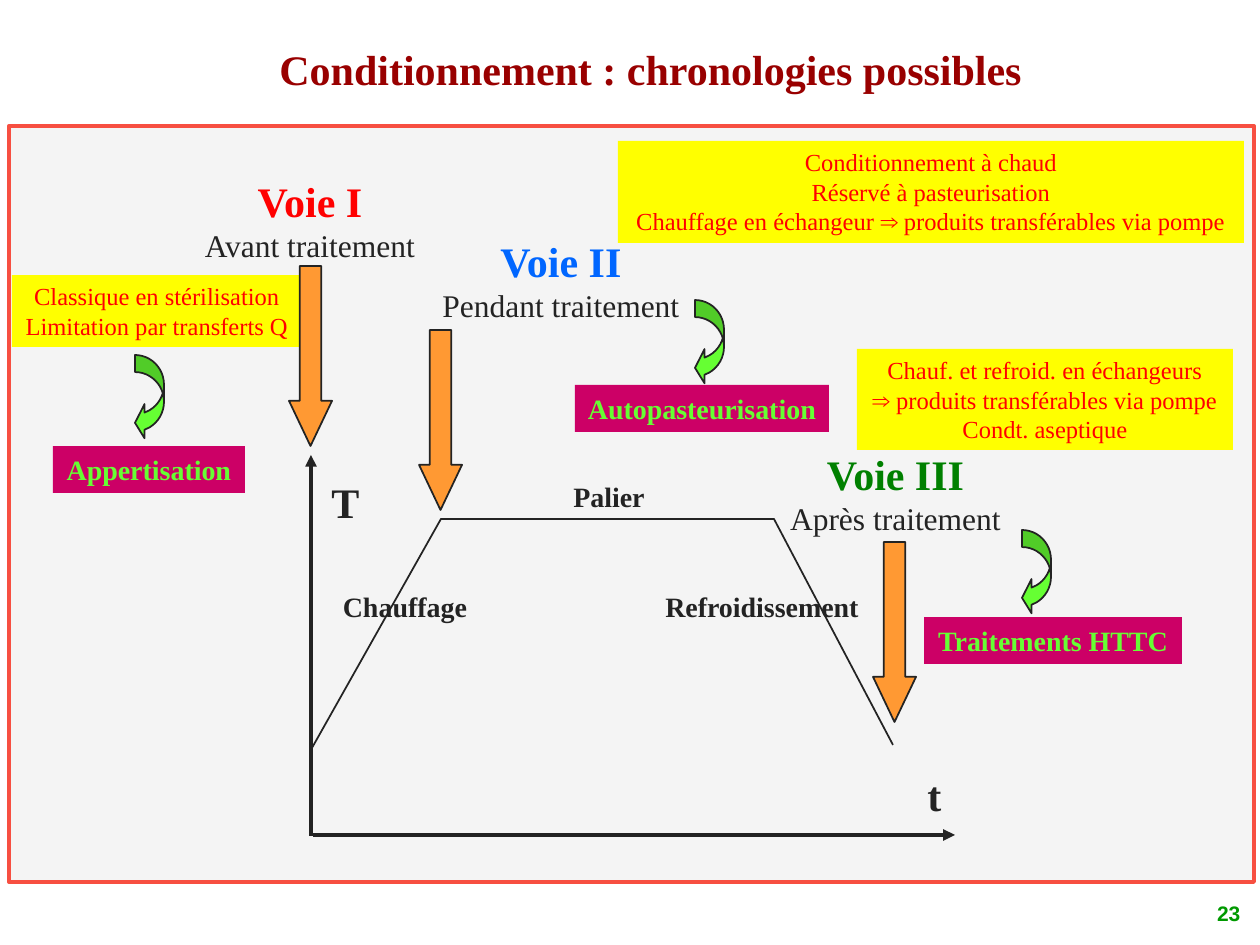
from lxml import etree
from pptx import Presentation
from pptx import util as u
from pptx.dml.color import RGBColor
from pptx.enum import shapes, text
from pptx.oxml import ns

PX = 914400 / 126
SERIF = "Times New Roman"
WHITE = RGBColor(0xFF, 0xFF, 0xFF)
INK = RGBColor(0x23, 0x23, 0x23)
PANEL = RGBColor(0xF4, 0xF4, 0xF4)
FRAME = RGBColor(0xF7, 0x4F, 0x41)
TITLE = RGBColor(0x99, 0x00, 0x00)
NUMBER = RGBColor(0x00, 0x99, 0x00)
RED = RGBColor(0xFF, 0x00, 0x00)
BLUE = RGBColor(0x00, 0x66, 0xFF)
GREEN = RGBColor(0x00, 0x80, 0x00)
YELLOW = RGBColor(0xFF, 0xFF, 0x00)
ORANGE = RGBColor(0xFF, 0x99, 0x33)
MAGENTA = RGBColor(0xCC, 0x00, 0x66)
LIME = RGBColor(0x66, 0xFF, 0x33)

SHAPE = shapes.MSO_SHAPE
CENTER = text.PP_ALIGN.CENTER
LEFT = text.PP_ALIGN.LEFT
TOP = text.MSO_ANCHOR.TOP


def px(*values):
    return [u.Emu(round(v * PX)) for v in values]


def style(size, color, bold=True, name=SERIF):
    return {"size": u.Pt(size), "bold": bold, "name": name}, color


HEADING = style(24, INK)
LABEL = style(16, INK)
BODY = style(18, INK, bold=False)
NOTE = style(14, RED, bold=False)
TAG = style(16, LIME)


def write(sp, lines, align=CENTER, anchor=TOP):
    """Fill a shape with (words, style) lines, one paragraph each."""
    tf = sp.text_frame
    tf.word_wrap = False
    tf.vertical_anchor = anchor
    for i, (words, (fmt, color)) in enumerate(lines):
        p = tf.add_paragraph() if i else tf.paragraphs[0]
        p.alignment = align
        r = p.add_run()
        r.text = words
        for key, value in fmt.items():
            setattr(r.font, key, value)
        r.font.color.rgb = color


def add_text(s, box, lines, align=CENTER):
    write(s.shapes.add_textbox(*px(*box)), lines, align)


def add_shape(s, kind, box, fill, line=None, width=1, adjust=()):
    sp = s.shapes.add_shape(kind, *px(*box))
    sp.shadow.inherit = False
    sp.fill.solid()
    sp.fill.fore_color.rgb = fill
    if line is None:
        sp.line.fill.background()
    else:
        sp.line.color.rgb = line
        sp.line.width = u.Pt(width)
    for i, value in enumerate(adjust):
        sp.adjustments[i] = value
    return sp


def add_box(s, box, fill, lines, fmt):
    write(add_shape(s, SHAPE.RECTANGLE, box, fill), [(t, fmt) for t in lines])


def add_route(s, box, name, color, moment):
    add_text(s, box, [(name, style(24, color)), (moment, BODY)])


def add_down_arrow(s, x, y):
    add_shape(s, SHAPE.DOWN_ARROW, (x, y, 43, 180), ORANGE, INK, adjust=(0.5, 1.05))


def add_curved_arrow(s, x, y):
    add_shape(s, SHAPE.CURVED_LEFT_ARROW, (x, y, 29, 85), LIME, INK,
              adjust=(0.59, 1.18, 0.33))


def add_axis(s, *ends):
    line = s.shapes.add_connector(shapes.MSO_CONNECTOR.STRAIGHT, *px(*ends))
    line.line.color.rgb = INK
    line.line.width = u.Pt(2.25)
    ln = line.line._get_or_add_ln()
    etree.SubElement(ln, ns.qn("a:tailEnd"), type="triangle")
    etree.SubElement(line._element.spPr, ns.qn("a:effectLst"))


def add_profile(s, start, *points):
    builder = s.shapes.build_freeform(*start, scale=PX)
    builder.add_line_segments(points, close=False)
    sp = builder.convert_to_shape()
    sp.shadow.inherit = False
    sp.fill.background()
    sp.line.color.rgb = INK
    sp.line.width = u.Pt(1)


def main():
    prs = Presentation()
    prs.slide_width, prs.slide_height = px(1260, 945)
    s = prs.slides.add_slide(prs.slide_layouts[6])

    # Page number, panel and title
    number = add_shape(s, SHAPE.OVAL, (1197, 892, 53, 42), WHITE)
    write(number, [("23", style(12, NUMBER, name="Arial"))],
          LEFT, text.MSO_ANCHOR.MIDDLE)
    add_shape(s, SHAPE.RECTANGLE, (9, 126, 1245, 756), PANEL, FRAME, 2.25)
    add_text(s, (267, 37, 769, 63),
             [("Conditionnement : chronologies possibles", style(24, TITLE))], LEFT)

    # Temperature against time
    add_axis(s, 311, 836, 311, 455)
    add_axis(s, 313, 835, 955, 835)
    add_text(s, (319, 470, 53, 63), [("T", HEADING)])
    add_text(s, (915, 763, 39, 63), [("t", HEADING)], LEFT)
    add_profile(s, (312, 748), (441, 519), (774, 519), (893, 745))
    for x, y, w, phase in [(330, 583, 150, "Chauffage"),
                           (652, 583, 220, "Refroidissement"),
                           (560, 473, 98, "Palier")]:
        add_text(s, (x, y, w, 47), [(phase, LABEL)])

    # The three routes
    add_route(s, (191, 169, 238, 101), "Voie I", RED, "Avant traitement")
    add_route(s, (430, 229, 262, 101), "Voie II", BLUE, "Pendant traitement")
    add_route(s, (777, 442, 237, 101), "Voie III", GREEN, "Après traitement")

    # Remarks
    add_box(s, (618, 141, 626, 102), YELLOW,
            ["Conditionnement à chaud", "Réservé à pasteurisation",
             "Chauffage en échangeur ⇒ produits transférables via pompe"], NOTE)
    add_box(s, (857, 349, 376, 101), YELLOW,
            ["Chauf. et refroid. en échangeurs",
             "⇒ produits transférables via pompe", "Condt. aseptique"], NOTE)
    add_box(s, (12, 275, 290, 72), YELLOW,
            ["Classique en stérilisation", "Limitation par transferts Q"], NOTE)

    # Resulting processes
    for x, y, w, process in [(53, 446, 192, "Appertisation"),
                             (575, 385, 254, "Autopasteurisation"),
                             (924, 617, 258, "Traitements HTTC")]:
        add_box(s, (x, y, w, 47), MAGENTA, [process], TAG)

    # Arrows
    for x, y in [(289, 266), (419, 330), (873, 542)]:
        add_down_arrow(s, x, y)
    for x, y in [(135, 355), (695, 300), (1022, 530)]:
        add_curved_arrow(s, x, y)

    prs.save("out.pptx")


if __name__ == "__main__":
    main()
